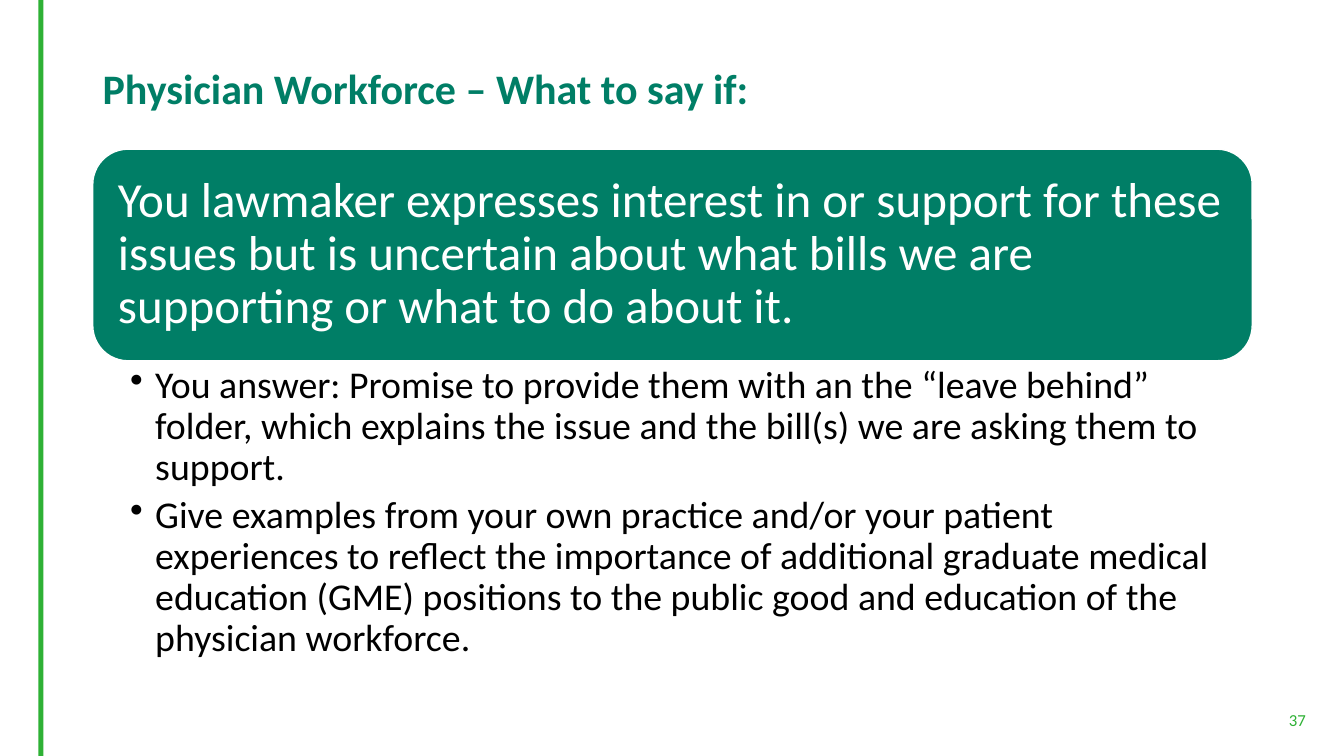
import pptx
import pptx.dml.color
import pptx.enum.shapes
import pptx.enum.text
import pptx.util
from lxml import etree

Inches = pptx.util.Inches
Pt = pptx.util.Pt
ANCHOR = pptx.enum.text.MSO_ANCHOR
ALIGN = pptx.enum.text.PP_ALIGN
SHAPES = pptx.enum.shapes.MSO_SHAPE

TEAL = pptx.dml.color.RGBColor(0x00, 0x7E, 0x66)
GREEN = pptx.dml.color.RGBColor(0x2E, 0xB1, 0x35)
WHITE = pptx.dml.color.RGBColor(0xFF, 0xFF, 0xFF)
BLACK = pptx.dml.color.RGBColor(0x00, 0x00, 0x00)

TITLE = "Physician Workforce – What to say if:"
SITUATION = (
    "You lawmaker expresses interest in or support for these issues but is "
    "uncertain about what bills we are supporting or what to do about it."
)
ANSWERS = [
    "You answer: Promise to provide them with an the “leave behind” folder, "
    "which explains the issue and the bill(s) we are asking them to support.",
    "Give examples from your own practice and/or your patient experiences to "
    "reflect the importance of additional graduate medical education (GME) "
    "positions to the public good and education of the physician workforce.",
]

TITLE_FONT = {"size": Pt(30), "bold": True}
SITUATION_FONT = {"size": Pt(35)}
ANSWER_FONT = {"size": Pt(27)}
NUMBER_FONT = {"size": Pt(12)}


def add_bullet(paragraph, indent):
    properties = paragraph._p.get_or_add_pPr()
    properties.set("marL", str(indent))
    properties.set("indent", str(-indent))
    bullet = etree.SubElement(properties, pptx.oxml.ns.qn("a:buChar"))
    bullet.set("char", "•")


def add_text(slide, box, texts, font, color, anchor=ANCHOR.TOP,
             insets=(0.1, 0.05, 0.1, 0.05), bullet_indent=None, **spacing):
    frame = slide.shapes.add_textbox(*map(Inches, box)).text_frame
    frame.word_wrap = True
    frame.vertical_anchor = anchor
    for side, inset in zip(("left", "top", "right", "bottom"), insets):
        setattr(frame, f"margin_{side}", Inches(inset))
    for index, text in enumerate(texts):
        paragraph = frame.add_paragraph() if index else frame.paragraphs[0]
        if bullet_indent:
            add_bullet(paragraph, Inches(bullet_indent))
        for name, value in spacing.items():
            setattr(paragraph, name, value)
        run = paragraph.add_run()
        run.text = text
        for name, value in {"name": "Calibri", **font}.items():
            setattr(run.font, name, value)
        run.font.color.rgb = color


def add_panel(slide, kind, box, fill):
    panel = slide.shapes.add_shape(kind, *map(Inches, box))
    panel.shadow.inherit = False
    panel.fill.solid()
    panel.fill.fore_color.rgb = fill
    panel.line.fill.background()
    return panel


def add_situation(slide, box):
    left, top, width, height = box
    banner = add_panel(slide, SHAPES.ROUNDED_RECTANGLE, box, TEAL)
    banner.line.color.rgb = WHITE
    banner.line.width = Pt(1)
    pad = 0.1
    inner = (left + pad, top + pad, width - 2 * pad, height - 2 * pad)
    add_text(slide, inner, [SITUATION], SITUATION_FONT, WHITE, ANCHOR.MIDDLE,
             insets=(0.15,) * 4, line_spacing=0.9)


def add_answers(slide, box):
    add_text(slide, box, ANSWERS, ANSWER_FONT, BLACK,
             insets=(0.37, 0.05, 0.27, 0.05), bullet_indent=0.25,
             line_spacing=0.9, space_after=Pt(5.4))


def add_content(slide, box):
    left, top, width, height = box
    banner_height = 2.1
    add_situation(slide, (left, top, width, banner_height))
    add_answers(slide, (left, top + banner_height, width, height - banner_height))


def main():
    deck = pptx.Presentation()
    deck.slide_width, deck.slide_height = Inches(13.33), Inches(7.5)
    slide = deck.slides.add_slide(deck.slide_layouts[6])

    # Green bar along the left edge
    add_panel(slide, SHAPES.RECTANGLE, (0.38, 0, 0.05, 7.5), GREEN)

    # Title
    add_text(slide, (0.92, 0.4, 11.5, 1), [TITLE], TITLE_FONT, TEAL,
             ANCHOR.MIDDLE, line_spacing=0.9)

    # Situation banner with its answers below
    add_content(slide, (0.92, 1.48, 11.5, 5.19))

    # Slide number
    add_text(slide, (9.57, 6.99, 3.48, 0.3), ["37"], NUMBER_FONT, GREEN,
             ANCHOR.BOTTOM, alignment=ALIGN.RIGHT)

    deck.save("out.pptx")


if __name__ == "__main__":
    main()
